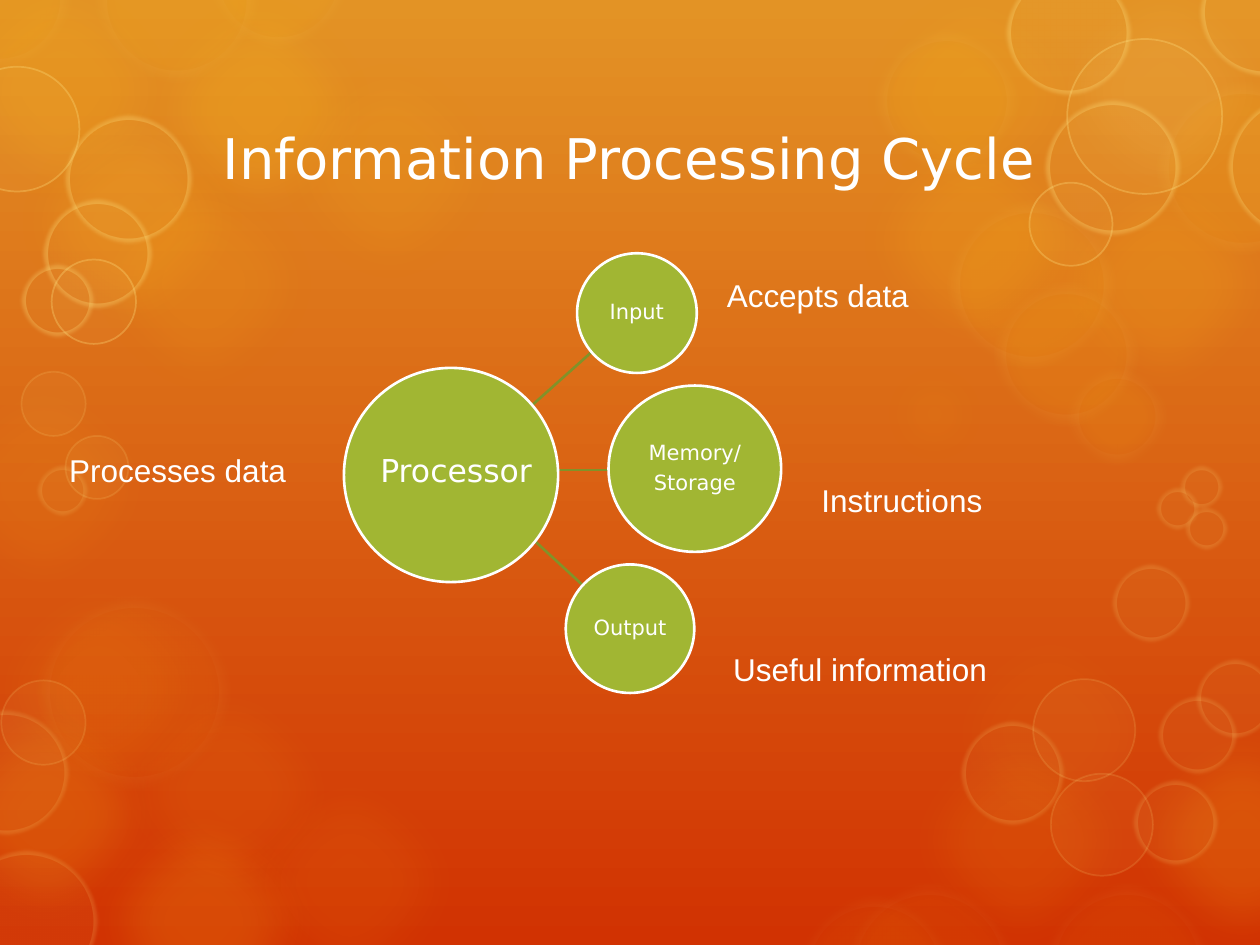
from lxml.etree import SubElement
from pptx import Presentation
from pptx.dml.color import RGBColor as RGB
from pptx.enum.shapes import MSO_CONNECTOR as CONN, MSO_SHAPE as SHAPE
from pptx.enum.text import MSO_ANCHOR as ANCHOR, PP_ALIGN as ALIGN
from pptx.oxml.ns import qn
from pptx.util import Inches, Pt

THEME = {
    "top": "E39325", "bottom": "D13202", "white": "FFFFFF",
    "node": "A1B633", "link": "819229",
    "amber": "FDC61B", "cream": "FEEBAE", "straw": "FFE281",
    "display": "DejaVu Sans", "body": "Arial",
    "title_size": 32, "label_size": 18, "node_size": 12, "outline": 1.5,
}

TITLE = ("Information Processing Cycle", 1.1, 0.74, 7.79, 1.01)
PROCESSOR = (2.73, 2.92, 1.7, 1.7)
# lines of text, circle box, link start, link end
NODES = [
    (["Output"], (4.49, 4.48, 1.02, 1.02), (4.23, 4.28), (4.62, 4.64)),
    (["Memory/", "Storage"], (4.83, 3.06, 1.37, 1.32), (4.23, 3.73), (4.83, 3.73)),
    (["Input"], (4.58, 2.01, 0.95, 0.95), (4.23, 3.21), (4.7, 2.79)),
]
LABELS = [
    ("Processor", 2.92, 3.53, 1.42, "display"),
    ("Accepts data", 5.67, 2.14, 1.66, "body"),
    ("Instructions", 6.42, 3.77, 1.55, "body"),
    ("Useful information", 5.72, 5.11, 2.24, "body"),
    ("Processes data", 0.45, 3.53, 1.94, "body"),
]

GLOW_SIZE = 2.09
# opacity: corners of the large soft glows
GLOWS = {
    5: [(7.29, 4.77)],
    8: [(-0.26, 4.42), (0.77, 5.24), (1.73, 5.96), (-0.7, 2.82)],
    10: [(0.57, 1.2), (2.05, 0.31), (6.69, -0.29), (7.06, 5.62)],
    14: [(-0.56, -0.33)],
    15: [(0, 0.72), (8.2, 1.2), (6.69, 0.86)],
    16: [(0.57, 6.27), (8.81, 5.62), (-0.68, 5.41)],
    20: [(1.01, -0.18)],
}
# fill, opacity, (line colour, width, opacity), soft edge in points, circles
BUBBLES = [
    ("amber", opacity, None, 25, [(x, y, GLOW_SIZE) for x, y in corners])
    for opacity, corners in GLOWS.items()
] + [
    ("straw", 10, None, 25, [(8.2, -0.33, GLOW_SIZE)]),
    ("amber", 10, None, 25, [(6.75, 2.62, 1.33)]),
    ("amber", 10, ("cream", 14, 6), 10, [
        (9.18, 0.65, 1.37), (6.94, 0.23, 1.14), (7.52, 1.59, 1.33),
        (7.89, 2.24, 1.14), (8.47, 2.91, 0.79), (0.75, -0.65, 1.3),
        (1.64, -0.75, 1.14), (-0.57, -0.58, 1.14)]),
    ("amber", 6, ("cream", 14, 4), 10, [
        (0.3, 4.73, 1.53), (6.32, 7.1, 1.24), (6.7, 7.01, 1.36),
        (8.28, 7.01, 1.33)]),
    ("straw", 5, ("straw", 5, 30), 2.5, [
        (0.52, 0.92, 1), (0.35, 1.59, 0.85), (0.17, 2.1, 0.57),
        (7.99, -0.23, 0.98), (9.53, -0.4, 1), (9.75, 0.76, 1.12),
        (8.3, 0.8, 1.06)]),
    ("straw", 5, ("straw", 5, 15), 2.5, [
        (-0.35, 6.75, 1.12), (-0.44, 5.64, 0.98), (7.63, 5.73, 0.81),
        (9, 6.2, 0.66), (8.83, 4.48, 0.61), (9.2, 5.53, 0.61),
        (9.5, 5.24, 0.61), (9.37, 3.7, 0.33), (9.18, 3.87, 0.33),
        (9.41, 4.03, 0.33), (0.3, 3.7, 0.39)]),
    ("straw", 5, ("straw", 1, 30), 0, [
        (-0.36, 0.53, 0.99), (0.41, 2.06, 0.67), (8.47, 0.31, 1.23),
        (8.17, 1.45, 0.66)]),
    ("straw", 5, ("straw", 1, 15), 0, [
        (0.01, 5.4, 0.67), (8.34, 6.14, 0.81), (8.2, 5.39, 0.81),
        (0.17, 2.95, 0.51), (0.52, 3.46, 0.5)]),
]


def color(name):
    return RGB.from_string(THEME[name])


def paint(fill, name, opacity=100):
    fill.solid()
    fill.fore_color.rgb = color(name)
    if opacity < 100:
        clr = fill._xPr.find(qn("a:solidFill"))[0]
        SubElement(clr, qn("a:alpha"), val=str(opacity * 1000))


def add_oval(shapes, box):
    sp = shapes.add_shape(SHAPE.OVAL, *map(Inches, box))
    sp.shadow.inherit = False
    return sp


def add_bubble(shapes, circle, fill, opacity, line, soft):
    x, y, size = circle
    sp = add_oval(shapes, (x, y, size, size))
    paint(sp.fill, fill, opacity)
    if line:
        name, width, line_opacity = line
        sp.line.width = Pt(width)
        paint(sp.line.fill, name, line_opacity)
    else:
        sp.line.fill.background()
    if soft:
        effects = sp._element.spPr.find(qn("a:effectLst"))
        SubElement(effects, qn("a:softEdge"), rad=str(Pt(soft)))


def add_node(shapes, box):
    sp = add_oval(shapes, box)
    paint(sp.fill, "node")
    paint(sp.line.fill, "white")
    sp.line.width = Pt(THEME["outline"])
    return sp


def add_link(shapes, start, end):
    link = shapes.add_connector(CONN.STRAIGHT, *map(Inches, start + end))
    paint(link.line.fill, "link")
    link.line.width = Pt(THEME["outline"])
    SubElement(link._element.spPr, qn("a:effectLst"))


def write(p, text, size, font="display", align=ALIGN.CENTER):
    p.text = text
    p.alignment = align
    p.font.size = Pt(THEME[size])
    p.font.name = THEME[font]
    p.font.color.rgb = color("white")


def write_node(sp, lines):
    tf = sp.text_frame
    tf.word_wrap = True
    tf.vertical_anchor = ANCHOR.MIDDLE
    tf.margin_left = tf.margin_right = Inches(0.01)
    tf.margin_top = tf.margin_bottom = Inches(0.01)
    for i, text in enumerate(lines):
        p = tf.add_paragraph() if i else tf.paragraphs[0]
        write(p, text, "node_size")
        p.line_spacing = 0.9
        p.space_after = Pt(0.35 * THEME["node_size"])


def main():
    prs = Presentation()
    prs.slide_width, prs.slide_height = Inches(10), Inches(7.5)
    s = prs.slides.add_slide(prs.slide_layouts[6])
    fill = s.background.fill
    fill.gradient()
    fill.gradient_angle = 270
    for stop, name in zip(fill.gradient_stops, ("top", "bottom")):
        stop.color.rgb = color(name)

    for *style, circles in BUBBLES:
        for circle in circles:
            add_bubble(s.shapes, circle, *style)

    text, *box = TITLE
    tf = s.shapes.add_textbox(*map(Inches, box)).text_frame
    tf.word_wrap = True
    tf.vertical_anchor = ANCHOR.MIDDLE
    write(tf.paragraphs[0], text, "title_size")

    for _, _, start, end in NODES:
        add_link(s.shapes, start, end)
    for lines, box, _, _ in NODES:
        write_node(add_node(s.shapes, box), lines)
    add_node(s.shapes, PROCESSOR)

    for text, x, y, width, font in LABELS:
        tf = s.shapes.add_textbox(*map(Inches, (x, y, width, 0.4))).text_frame
        tf.word_wrap = False
        write(tf.paragraphs[0], text, "label_size", font, ALIGN.LEFT)
    prs.save("out.pptx")


if __name__ == "__main__":
    main()
